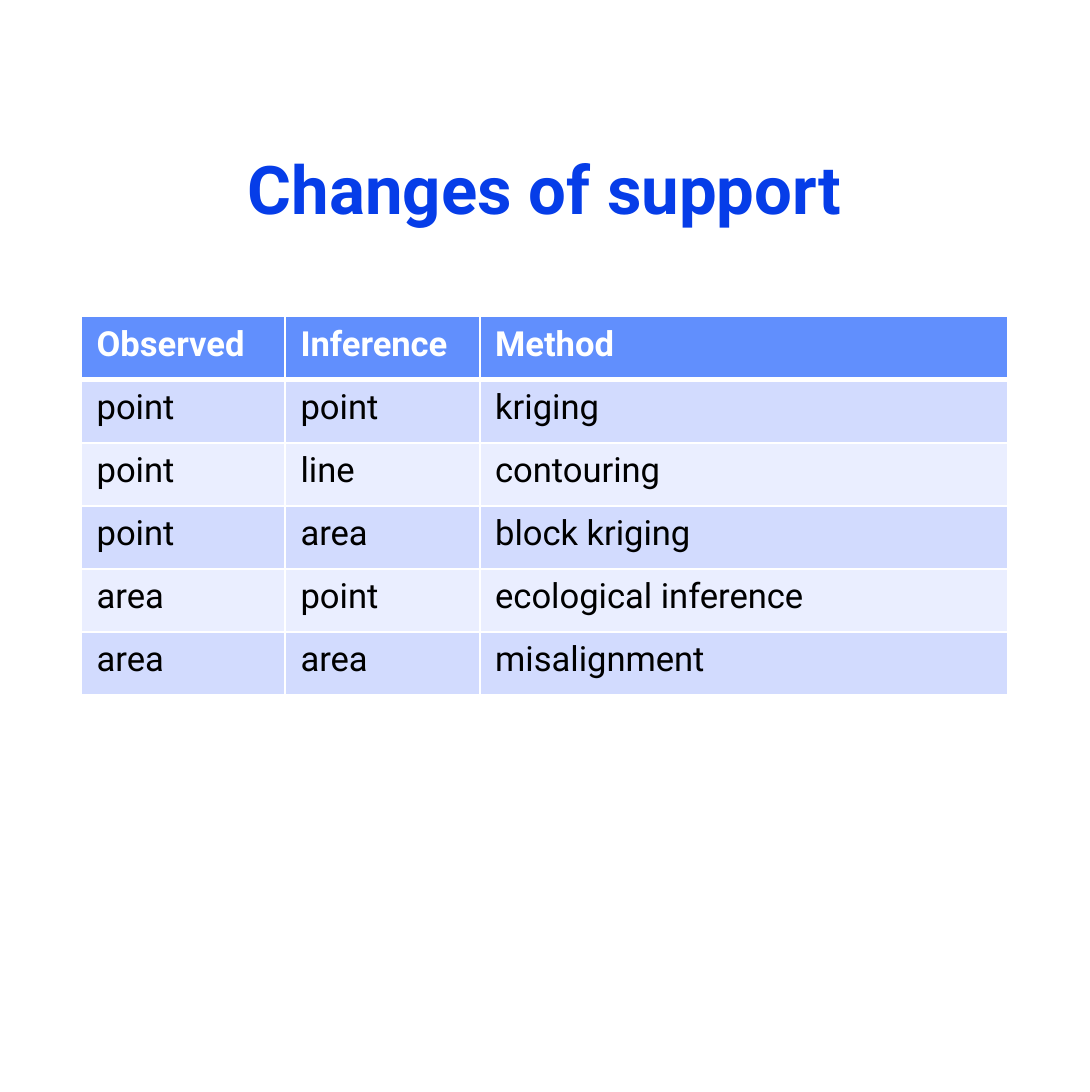
from dataclasses import dataclass

from lxml import etree
from pptx import Presentation
from pptx.dml.color import RGBColor
from pptx.enum import text
from pptx.oxml import ns
from pptx.util import Pt


@dataclass(frozen=True)
class Theme:
    font: str = "Roboto"
    title: str = "063DE8"
    head: str = "618FFD"
    odd: str = "D2DBFE"
    even: str = "EAEEFF"
    white: str = "FFFFFF"
    black: str = "000000"
    large: int = 31
    body: int = 16


theme = Theme()


def write(frame, words, size=theme.body, color=theme.black, bold=False,
          align=text.PP_ALIGN.LEFT):
    para = frame.paragraphs[0]
    para.alignment = align
    run = para.add_run()
    run.text = words
    run.font.name = theme.font
    run.font.size = Pt(size)
    run.font.bold = bold
    run.font.color.rgb = RGBColor.from_string(color)


def edge(cell, side, width):
    line = etree.SubElement(cell._tc.get_or_add_tcPr(), ns.qn(f"a:ln{side}"),
                            w=str(Pt(width)))
    fill = etree.SubElement(line, ns.qn("a:solidFill"))
    etree.SubElement(fill, ns.qn("a:srgbClr"), val=theme.white)


# Slide
deck = Presentation()
deck.slide_width, deck.slide_height = Pt(504), Pt(504.72)
slide = deck.slides.add_slide(deck.slide_layouts[6])
left, width = 37.5, 428.4

# Title
box = slide.shapes.add_textbox(Pt(left), Pt(44.6), Pt(width), Pt(84.2))
frame = box.text_frame
frame.word_wrap = True
frame.vertical_anchor = text.MSO_ANCHOR.MIDDLE
frame.margin_left = frame.margin_right = Pt(5)
frame.margin_top = frame.margin_bottom = Pt(2.2)
write(frame, "Changes of support", size=theme.large, color=theme.title,
      bold=True, align=text.PP_ALIGN.CENTER)

# Table
rows = [
    ("Observed", "Inference", "Method"),
    ("point", "point", "kriging"),
    ("point", "line", "contouring"),
    ("point", "area", "block kriging"),
    ("area", "point", "ecological inference"),
    ("area", "area", "misalignment"),
]
high = 29.2
table = slide.shapes.add_table(len(rows), 3, Pt(left), Pt(146.2), Pt(width),
                               Pt(high * len(rows))).table
for col, wide in zip(table.columns, (94.3, 90, 244.1)):
    col.width = Pt(wide)

# Cells: header row, then alternating bands
for r, row in enumerate(rows):
    table.rows[r].height = Pt(high)
    head = r == 0
    shade = theme.head if head else theme.odd if r % 2 else theme.even
    for c, words in enumerate(row):
        cell = table.cell(r, c)
        write(cell.text_frame, words, bold=head,
              color=theme.white if head else theme.black)
        for side in "LRTB":
            thick = (head and side == "B") or (r == 1 and side == "T")
            edge(cell, side, 3 if thick else 1)
        cell.fill.solid()
        cell.fill.fore_color.rgb = RGBColor.from_string(shade)

deck.save("out.pptx")
